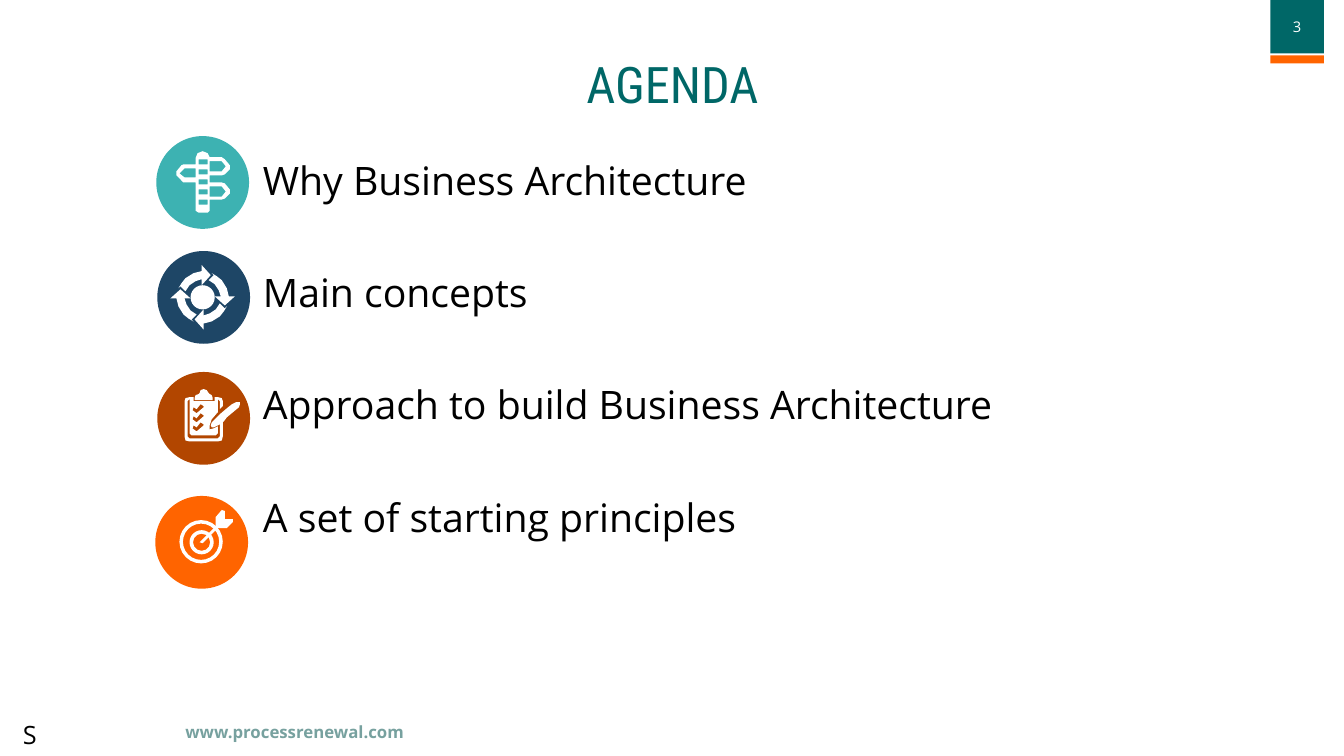
from dataclasses import dataclass

from pptx import Presentation
from pptx.dml.color import RGBColor
from pptx.enum.shapes import MSO_SHAPE as SHAPE
from pptx.enum.text import MSO_ANCHOR as ANCHOR, PP_ALIGN as ALIGN
from pptx.util import Inches, Pt

Point = tuple[float, float]
Contour = list[Point]

COLORS = {
    "green": "006767", "orange": "FF6400", "teal": "3DB2B2", "navy": "1E4666",
    "rust": "B24600", "sage": "77A19F", "white": "FFFFFF", "black": "000000",
}
BODY_FONT = "Open Sans"
TITLE_FONT = "Roboto Condensed"
DISC_SIZE = 0.92


@dataclass
class AgendaItem:
    text: str
    left: float
    top: float
    color: str


@dataclass
class Label:
    text: str
    box: tuple[float, float, float, float]
    size: float
    color: str
    font: str = BODY_FONT
    bold: bool = False
    align: ALIGN = ALIGN.LEFT
    anchor: ANCHOR = ANCHOR.TOP
    line_spacing: float = 1.0
    gap: float = 0
    wrap: bool = True


AGENDA = [
    AgendaItem("Why Business Architecture", 1.55, 1.35, "teal"),
    AgendaItem("Main concepts", 1.56, 2.49, "navy"),
    AgendaItem("Approach to build Business Architecture", 1.56, 3.69, "rust"),
    AgendaItem("A set of starting principles", 1.54, 4.92, "orange"),
]

LABELS = [
    Label("3", (12.47, 0.01, 0.79, 0.51), 10.5, "white",
          align=ALIGN.CENTER, anchor=ANCHOR.MIDDLE),
    Label("www.processrenewal.com", (1.74, 7.11, 2.48, 0.3), 12, "sage", bold=True),
    Label("\n".join(item.text for item in AGENDA), (2.51, 1.55, 11.5, 5.25), 28, "black",
          line_spacing=0.9, gap=50),
    Label("AGENDA", (0.92, 0.4, 11.5, 0.92), 36, "green", font=TITLE_FONT,
          align=ALIGN.CENTER, anchor=ANCHOR.MIDDLE, line_spacing=0.9),
    Label("S", (0.13, 7.09, 0.34, 0.4), 18, "black", wrap=False),
]

SIGNPOST: Contour = [
    (2.23, 1.82), (2.2, 1.81), (2.08, 1.81), (2.08, 1.74), (2.2, 1.74), (2.23, 1.73),
    (2.28, 1.68), (2.28, 1.64), (2.23, 1.58), (2.2, 1.56), (2.08, 1.56), (2.06, 1.52),
    (2.01, 1.5), (1.96, 1.52), (1.94, 1.57), (1.94, 1.63), (1.82, 1.63), (1.8, 1.64),
    (1.75, 1.7), (1.75, 1.74), (1.8, 1.79), (1.82, 1.81), (1.94, 1.81), (1.94, 2.09),
    (1.97, 2.11), (2.06, 2.11), (2.08, 2.09), (2.08, 1.98), (2.2, 1.98), (2.23, 1.97),
    (2.28, 1.92), (2.28, 1.88),
]
LEFT_SIGN: Contour = [(1.94, 1.76), (1.83, 1.76), (1.78, 1.72), (1.83, 1.67), (1.94, 1.67)]
RIGHT_SIGN: Contour = [(2.24, 1.65), (2.2, 1.7), (2.08, 1.7), (2.08, 1.6), (2.2, 1.6)]
POST_GAP: Contour = [(1.97, 1.58), (2.06, 1.58), (2.06, 1.63), (1.97, 1.63)]

CYCLE_CENTER = (2.01, 2.95)
CYCLE_ARROW: Contour = [
    (0.11, -0.22), (0.09, -0.24), (0.14, -0.21), (0.19, -0.17), (0.24, -0.09),
    (0.26, -0.01), (0.32, -0.01), (0.22, 0.08), (0.12, -0.01), (0.18, -0.01),
    (0.16, -0.07), (0.12, -0.13), (0.06, -0.17),
]

CLIPBOARD: Contour = [
    (2.21, 4.33), (2.21, 4.17), (2.18, 4.2), (2.18, 4.33), (2.16, 4.35), (1.88, 4.35),
    (1.86, 4.33), (1.86, 3.98), (1.88, 3.96), (1.88, 4.3), (1.9, 4.32), (2.14, 4.32),
    (2.16, 4.3), (2.16, 4.23), (2.12, 4.25), (2.08, 4.26), (2.08, 4.22), (2.1, 4.16),
    (2.16, 4.09), (2.16, 3.96), (2.18, 3.98), (2.18, 4.06), (2.21, 4.03), (2.21, 3.98),
    (2.2, 3.95), (2.16, 3.94), (2.13, 3.94), (2.13, 3.98), (1.92, 3.98), (1.92, 3.94),
    (1.88, 3.94), (1.84, 3.95), (1.83, 3.98), (1.83, 4.33), (1.84, 4.37), (1.88, 4.38),
    (2.16, 4.38), (2.2, 4.37),
]
TICK: Contour = [(2.02, 4.04), (1.95, 4.1), (1.91, 4.07), (1.92, 4.04), (1.95, 4.06),
                 (1.99, 4.01), (2.02, 4.03)]
CLIP: Contour = [
    (2.08, 3.91), (2.07, 3.9), (2.05, 3.87), (2.02, 3.86), (1.99, 3.87), (1.98, 3.9),
    (1.97, 3.91), (1.94, 3.92), (1.93, 3.95), (1.93, 3.97), (2.11, 3.97), (2.11, 3.95),
    (2.1, 3.92),
]
PENCIL: Contour = [
    (2.38, 4.01), (2.38, 3.99), (2.36, 3.99), (2.34, 3.99), (2.3, 4.01), (2.25, 4.05),
    (2.18, 4.11), (2.12, 4.17), (2.1, 4.19), (2.09, 4.22), (2.1, 4.24), (2.12, 4.24),
    (2.18, 4.21), (2.22, 4.18), (2.25, 4.14), (2.37, 4.04),
]

DART: Contour = [
    (1.98, 5.38), (2.14, 5.22), (2.14, 5.13), (2.2, 5.06), (2.23, 5.07), (2.23, 5.15),
    (2.31, 5.15), (2.31, 5.18), (2.25, 5.24), (2.16, 5.24), (2.01, 5.39),
]


def shifted(contour: Contour, dx: float, dy: float) -> Contour:
    return [(x + dx, y + dy) for x, y in contour]


def quarter_turned(contour: Contour) -> Contour:
    return [(-y, x) for x, y in contour]


def paint(sp, color: str) -> None:
    sp.fill.solid()
    sp.fill.fore_color.rgb = RGBColor.from_string(COLORS[color])
    sp.line.fill.background()
    sp.shadow.inherit = False


def add_preset(s, kind: SHAPE, left: float, top: float, width: float, height: float,
               color: str):
    sp = s.shapes.add_shape(kind, Inches(left), Inches(top), Inches(width), Inches(height))
    paint(sp, color)
    return sp


def add_outline(s, *contours: Contour) -> None:
    """Draw one white shape; contours inside the first one become holes."""
    builder = None
    for contour in contours:
        first, *rest = [(Inches(x), Inches(y)) for x, y in contour]
        if builder is None:
            builder = s.shapes.build_freeform(*first)
        else:
            builder.move_to(*first)
        builder.add_line_segments(rest, close=True)
    paint(builder.convert_to_shape(), "white")


def add_label(s, label: Label) -> None:
    tf = s.shapes.add_textbox(*map(Inches, label.box)).text_frame
    tf.word_wrap = label.wrap
    tf.vertical_anchor = label.anchor
    tf.text = label.text
    for i, p in enumerate(tf.paragraphs):
        p.alignment = label.align
        p.line_spacing = label.line_spacing
        if i:
            p.space_before = Pt(label.gap)
        for r in p.runs:
            r.font.name = label.font
            r.font.size = Pt(label.size)
            r.font.bold = label.bold
            r.font.color.rgb = RGBColor.from_string(COLORS[label.color])


def add_signpost(s) -> None:
    gaps = [shifted(POST_GAP, 0, 0.1 * i) for i in range(5)]
    add_outline(s, SIGNPOST, LEFT_SIGN, RIGHT_SIGN, shifted(RIGHT_SIGN, 0, 0.25), *gaps)


def add_cycle(s) -> None:
    arrow = CYCLE_ARROW
    for _ in range(4):
        add_outline(s, shifted(arrow, *CYCLE_CENTER))
        arrow = quarter_turned(arrow)
    add_preset(s, SHAPE.OVAL, 1.89, 2.83, 0.24, 0.24, "white")


def add_checklist(s) -> None:
    add_outline(s, CLIPBOARD, *[shifted(TICK, 0, 0.09 * i) for i in range(3)])
    add_outline(s, CLIP)
    add_outline(s, PENCIL)


def add_target(s) -> None:
    for left, top, size in [(1.78, 5.16, 0.43), (1.88, 5.26, 0.24)]:
        ring = add_preset(s, SHAPE.DONUT, left, top, size, size, "white")
        ring.adjustments[0] = 0.035 / size
    add_outline(s, DART)


def main() -> None:
    prs = Presentation()
    prs.slide_width, prs.slide_height = Inches(13.33), Inches(7.5)
    s = prs.slides.add_slide(prs.slide_layouts[6])
    add_preset(s, SHAPE.RECTANGLE, 12.6, 0, 0.53, 0.53, "green")
    add_preset(s, SHAPE.RECTANGLE, 12.6, 0.55, 0.53, 0.08, "orange")
    for label in LABELS:
        add_label(s, label)
    for item in AGENDA:
        add_preset(s, SHAPE.OVAL, item.left, item.top, DISC_SIZE, DISC_SIZE, item.color)
    for add_icon in (add_signpost, add_cycle, add_checklist, add_target):
        add_icon(s)
    prs.save("out.pptx")


if __name__ == "__main__":
    main()
